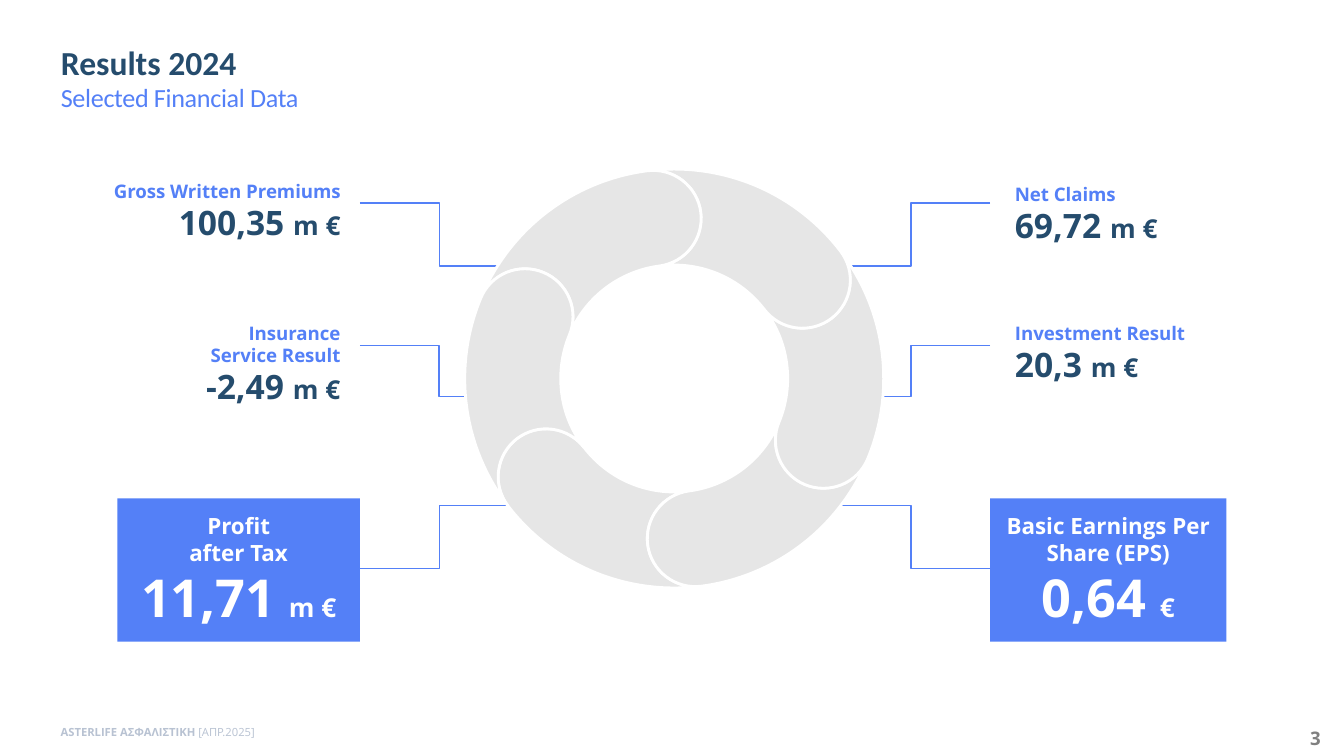
from math import cos, radians, sin, tan

from lxml import etree
from pptx import Presentation
from pptx.dml.color import RGBColor
from pptx.enum.shapes import MSO_CONNECTOR, MSO_SHAPE
from pptx.enum.text import MSO_ANCHOR, PP_ALIGN
from pptx.oxml.ns import qn
from pptx.util import Pt

ELBOW = MSO_CONNECTOR.ELBOW
RECT = MSO_SHAPE.RECTANGLE
TOP, MIDDLE = MSO_ANCHOR.TOP, MSO_ANCHOR.MIDDLE
LEFT, CENTER, RIGHT = PP_ALIGN.LEFT, PP_ALIGN.CENTER, PP_ALIGN.RIGHT

COLORS = {
    "blue": "5480F7",
    "navy": "254C6D",
    "ring": "E6E6E6",
    "white": "FFFFFF",
    "gray": "808080",
    "footer": "B8C2D2",
}
HEAD_FONT, BODY_FONT = "Calibri", "Open Sans"

RING_X, RING_Y = 361.2, 202.8
OUTER, INNER = 112.2, 60.8
MID, CAP = (OUTER + INNER) / 2, (OUTER - INNER) / 2
SEGMENTS, FIRST_ANGLE, TILT = 6, 172.5, 12


def rgb(name):
    return RGBColor.from_string(COLORS[name])


def add_run(p, text, size, color, bold=True, font=BODY_FONT):
    r = p.add_run()
    r.text = text
    r.font.size = Pt(size)
    r.font.name = font
    r.font.bold = bold
    r.font.color.rgb = rgb(color)
    return r


def set_frame(tf, inset_x=7.2, inset_y=7.2, anchor=TOP, wrap=True):
    tf.word_wrap = wrap
    tf.vertical_anchor = anchor
    tf.margin_left = tf.margin_right = Pt(inset_x)
    tf.margin_top = tf.margin_bottom = Pt(inset_y)


def add_text_frame(slide, x, y, w, h, **frame):
    sp = slide.shapes.add_textbox(Pt(x), Pt(y), Pt(w), Pt(h))
    set_frame(sp.text_frame, **frame)
    return sp.text_frame


def write_figure(tf, lines, value, unit, align, sizes, colors, joined=False):
    """Write a caption and a value with its unit, joined in one paragraph or not."""
    p = tf.paragraphs[0]
    p.alignment = align
    for i, line in enumerate(lines):
        if i:
            p.add_line_break()
        add_run(p, line, sizes[0], colors[0])
    if not joined:
        p = tf.add_paragraph()
        p.alignment = align
    add_run(p, value + " ", sizes[1], colors[1])
    add_run(p, unit, 14, colors[1])


def add_label(slide, x, y, w, h, caption, value, align):
    tf = add_text_frame(slide, x, y, w, h)
    write_figure(tf, [caption], value, "m €", align, (10, 18), ("blue", "navy"))


def add_box(slide, x, w, lines, value, unit, joined=False):
    sp = slide.shapes.add_shape(RECT, Pt(x), Pt(267), Pt(w), Pt(76.8))
    sp.shadow.inherit = False
    sp.fill.solid()
    sp.fill.fore_color.rgb = rgb("blue")
    sp.line.fill.background()
    set_frame(sp.text_frame, anchor=MIDDLE)
    write_figure(sp.text_frame, lines, value, unit, CENTER, (12, 28),
                 ("white", "white"), joined)


def add_elbow(slide, x1, y1, x2, y2, bend):
    """Draw an elbow line whose turn lies at the share bend of its width."""
    line = slide.shapes.add_connector(ELBOW, Pt(x1), Pt(y1), Pt(x2), Pt(y2))
    line.line.color.rgb = rgb("blue")
    line.line.width = Pt(0.75)
    sp_pr = line._element.spPr
    guides = sp_pr.find(qn("a:prstGeom")).get_or_add_avLst()
    etree.SubElement(guides, qn("a:gd"), name="adj1", fmla=f"val {round(bend * 100000)}")
    etree.SubElement(sp_pr, qn("a:effectLst"))


def add_connectors(slide):
    """Draw three elbow lines on the left and mirror them on the right."""
    start, span = 192.8, 723.3
    for y1, y2, end in ((304.6, 270.7, 277.8), (185, 212.4, 299.5), (108.7, 142.6, 277.8)):
        bend = 42.5 / (end - start)
        add_elbow(slide, span - start, y1, span - end, y2, bend)
        add_elbow(slide, start, y1, end, y2, bend)


def polar(x, y, radius, degrees):
    """Return the point at a clockwise angle from twelve o'clock."""
    a = radians(degrees)
    return x + radius * sin(a), y - radius * cos(a)


def arc(x, y, radius, first, last, count):
    """Return an arc as Bezier curves, each two handles and an end point."""
    step = (last - first) / count
    handle = radius * 4 / 3 * tan(radians(step) / 4)
    curves = []
    for i in range(count):
        a, b = first + i * step, first + (i + 1) * step
        (x1, y1), (x2, y2) = polar(x, y, radius, a), polar(x, y, radius, b)
        ta, tb = radians(a), radians(b)
        curves.append(((x1 + handle * cos(ta), y1 + handle * sin(ta)),
                       (x2 - handle * cos(tb), y2 - handle * sin(tb)),
                       (x2, y2)))
    return curves


def segment_curves(first, last):
    head = polar(RING_X, RING_Y, MID, last)
    tail = polar(RING_X, RING_Y, MID, first)
    return (arc(RING_X, RING_Y, OUTER, first, last, 2)
            + arc(*head, CAP, last, last + 180, 4)
            + arc(RING_X, RING_Y, INNER, last, first, 2)
            + arc(*tail, CAP, first + 180, first, 4))


def bend_lines(sp, curves):
    """Turn each straight step of a freeform into its Bezier curve."""
    steps = list(sp._element.iter(qn("a:lnTo")))
    for step, curve in zip(steps, curves):
        step.tag = qn("a:cubicBezTo")
        step.clear()
        for x, y in curve:
            etree.SubElement(step, qn("a:pt"), x=str(Pt(x) - sp.left), y=str(Pt(y) - sp.top))


def tilt(sp):
    """Turn a shape about the centre of the ring."""
    dx = sp.left + sp.width / 2 - Pt(RING_X)
    dy = sp.top + sp.height / 2 - Pt(RING_Y)
    c, s = cos(radians(TILT)), sin(radians(TILT))
    sp.left = round(Pt(RING_X) + dx * c - dy * s - sp.width / 2)
    sp.top = round(Pt(RING_Y) + dx * s + dy * c - sp.height / 2)
    sp.rotation = TILT


def add_segment(slide, first, last):
    curves = segment_curves(first - TILT, last - TILT)
    ends = [(Pt(x), Pt(y)) for _, _, (x, y) in curves]
    builder = slide.shapes.build_freeform(*ends[-1])
    builder.add_line_segments(ends, close=True)
    sp = builder.convert_to_shape()
    bend_lines(sp, curves)
    tilt(sp)
    sp.shadow.inherit = False
    sp.fill.solid()
    sp.fill.fore_color.rgb = rgb("ring")
    sp.line.color.rgb = rgb("white")
    sp.line.width = Pt(1.5)


def add_ring(slide):
    sweep = 360 / SEGMENTS
    for i in range(SEGMENTS):
        first = FIRST_ANGLE - i * sweep
        add_segment(slide, first, first + sweep)


def add_title(slide):
    p = add_text_frame(slide, 25.5, 15.5, 481.7, 51.8, anchor=MIDDLE).paragraphs[0]
    add_run(p, "Results 2024", 18, "navy", font=HEAD_FONT)
    p.add_line_break()
    r = add_run(p, "Selected Financial Data", 14, "blue", False, HEAD_FONT)
    r._r.get_or_add_rPr().set("spc", "-20")


def add_footer(slide):
    small = {"inset_y": 3.6, "wrap": False}
    p = add_text_frame(slide, 694.8, 385.9, 20.2, 19.4, **small).paragraphs[0]
    add_run(p, "3", 10, "gray")
    p = add_text_frame(slide, 25.4, 385.2, 121.7, 14.4, **small).paragraphs[0]
    add_run(p, "ASTERLIFE ΑΣΦΑΛΙΣΤΙΚΗ ", 6, "footer")
    add_run(p, "[ΑΠΡ.2025]", 6, "footer", False)


def main():
    prs = Presentation()
    prs.slide_width, prs.slide_height = Pt(720), Pt(405)
    slide = prs.slides.add_slide(prs.slide_layouts[6])
    add_title(slide)
    add_footer(slide)
    add_connectors(slide)
    add_label(slide, 87.9, 165, 101.5, 62.6, "Insurance Service Result", "-2,49", RIGHT)
    add_box(slide, 62.9, 129.9, ["Profit", "after Tax "], "11,71", "m €", joined=True)
    add_label(slide, 536.6, 165, 107.3, 54, "Investment Result", "20,3", LEFT)
    add_ring(slide)
    add_label(slide, 42.7, 89.2, 146.9, 62.6, "Gross Written Premiums", "100,35", RIGHT)
    add_label(slide, 536.6, 90.5, 146.9, 54, "Net Claims", "69,72", LEFT)
    add_box(slide, 530.4, 126.7, ["Basic Earnings Per Share (EPS)"], "0,64", "€")
    prs.save("out.pptx")


if __name__ == "__main__":
    main()
